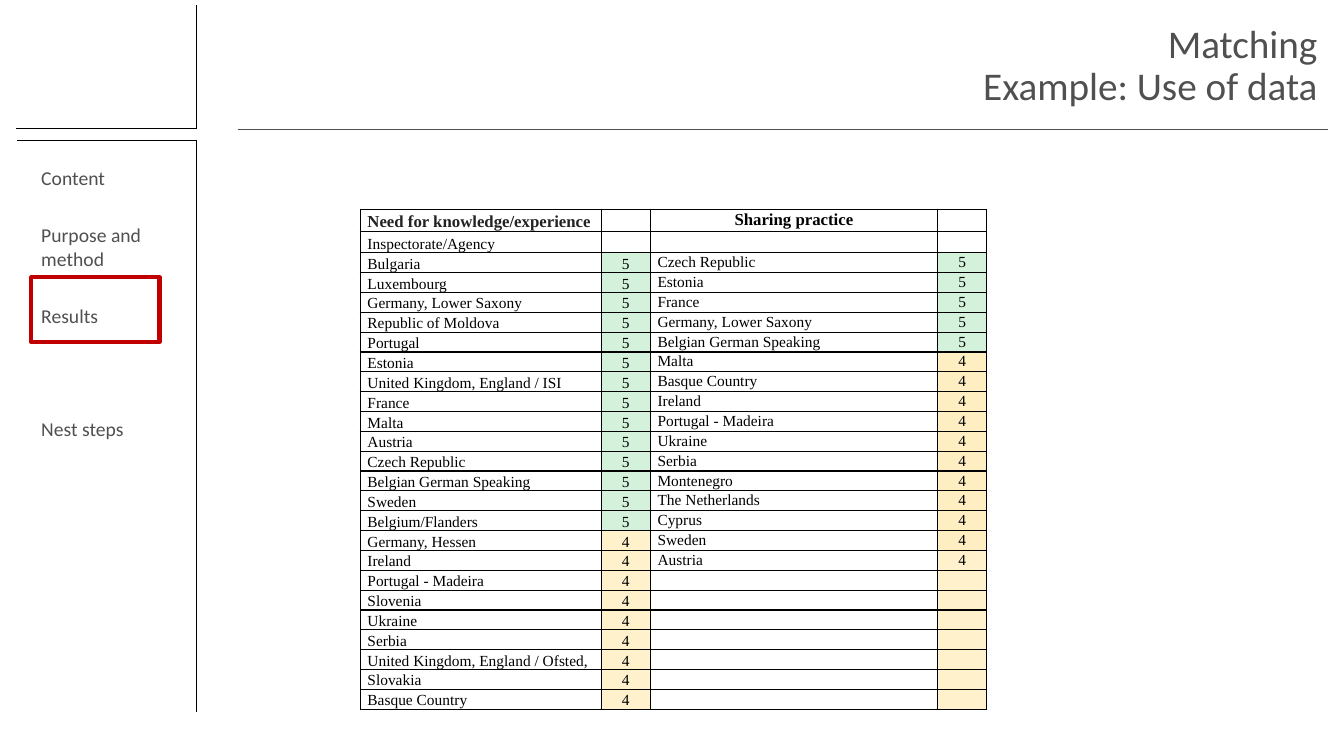
from itertools import zip_longest

from lxml.etree import SubElement, fromstring
from pptx import Presentation
from pptx.dml.color import RGBColor
from pptx.enum.shapes import MSO_CONNECTOR, MSO_SHAPE
from pptx.enum.text import MSO_ANCHOR as Anchor, PP_ALIGN as Align
from pptx.oxml.ns import nsdecls, qn
from pptx.util import Cm, Pt

COLORS = {
    "black": "000000", "text": "505050", "heading": "222222", "marker": "C00000",
    "white": "FFFFFF", "green": "D3F1DB", "amber": "FEEEC2", "pale": "FEF1CC",
}
NEEDS = [
    ("Bulgaria", 5), ("Luxembourg", 5), ("Germany, Lower Saxony", 5),
    ("Republic of Moldova", 5), ("Portugal", 5), ("Estonia", 5),
    ("United Kingdom, England / ISI", 5), ("France", 5), ("Malta", 5),
    ("Austria", 5), ("Czech Republic", 5), ("Belgian German Speaking", 5),
    ("Sweden", 5), ("Belgium/Flanders", 5), ("Germany, Hessen", 4),
    ("Ireland", 4), ("Portugal - Madeira", 4), ("Slovenia", 4), ("Ukraine", 4),
    ("Serbia", 4), ("United Kingdom, England / Ofsted,", 4), ("Slovakia", 4),
    ("Basque Country", 4),
]
PRACTICES = [
    ("Czech Republic", 5), ("Estonia", 5), ("France", 5),
    ("Germany, Lower Saxony", 5), ("Belgian German Speaking", 5), ("Malta", 4),
    ("Basque Country", 4), ("Ireland", 4), ("Portugal - Madeira", 4),
    ("Ukraine", 4), ("Serbia", 4), ("Montenegro", 4), ("The Netherlands", 4),
    ("Cyprus", 4), ("Sweden", 4), ("Austria", 4),
]
LAST_AMBER_PRACTICE = 14
MENU = [("Content", 0), ("Purpose and method", 12), ("Results", 12), ("Nest steps", 52)]
COLUMN_WIDTHS = [6.07, 1.24, 7.24, 1.24]


def color(name):
    return RGBColor.from_string(COLORS[name])


def style_runs(para, font, size, color_name, bold=False):
    for span in para.runs:
        span.font.name = font
        span.font.size = Pt(size)
        span.font.bold = bold
        span.font.color.rgb = color(color_name)


def add_line(page, x1, y1, x2, y2, color_name="black"):
    line = page.shapes.add_connector(
        MSO_CONNECTOR.STRAIGHT, Cm(x1), Cm(y1), Cm(x2), Cm(y2))
    line.line.color.rgb = color(color_name)
    line.line.width = Pt(0.5)
    SubElement(line._element.spPr, qn("a:effectLst"))


def add_logo_corner(page, left, top, width, height):
    right, bottom = left + width, top + height
    add_line(page, left, bottom, right, bottom)
    add_line(page, right, top, right, bottom)


def add_header(page, left, top, width, height):
    box = page.shapes.add_textbox(Cm(left), Cm(top), Cm(width), Cm(height))
    frame = box.text_frame
    frame.word_wrap = True
    frame.vertical_anchor = Anchor.MIDDLE
    frame.text = "Matching\vExample: Use of data"
    para = frame.paragraphs[0]
    para.alignment = Align.RIGHT
    para.line_spacing = 0.9
    style_runs(para, "Calibri", 28, "text")
    rule = top + height + 0.02
    add_line(page, left + 0.53, rule, left + width + 0.03, rule, "text")


def add_sidebar(page, left, top, width, height):
    right = left + width
    add_line(page, left, top, right, top)
    add_line(page, right, top, right, top + height)

    box = page.shapes.add_textbox(Cm(left + 0.36), Cm(top + 0.53), Cm(3.4), Cm(8.71))
    frame = box.text_frame
    frame.word_wrap = True
    frame.text = "\n".join(label for label, _ in MENU)
    for para, (_, space) in zip(frame.paragraphs, MENU):
        para.space_before = Pt(space)
        para.space_after = Pt(12)
        style_runs(para, "Calibri", 14, "text")

    marker = page.shapes.add_shape(
        MSO_SHAPE.RECTANGLE, Cm(left + 0.36), Cm(top + 3.46), Cm(3.23), Cm(1.63))
    marker.shadow.inherit = False
    marker.fill.background()
    marker.line.color.rgb = color("marker")
    marker.line.width = Pt(3)


def add_borders(cell):
    properties = cell._tc.get_or_add_tcPr()
    for position, side in enumerate(("lnL", "lnR", "lnT", "lnB")):
        properties.insert(position, fromstring(
            f'<a:{side} {nsdecls("a")} w="12700"><a:solidFill>'
            f'<a:srgbClr val="{COLORS["black"]}"/></a:solidFill></a:{side}>'))


def fill_cell(cell, text, column, fill=None, size=11, color_name="black",
              bold=False, centered=False):
    cell.margin_left = cell.margin_right = Cm(0.18)
    cell.margin_top = cell.margin_bottom = 0
    cell.vertical_anchor = Anchor.BOTTOM if column < 2 else Anchor.TOP
    cell.text_frame.text = text
    para = cell.text_frame.paragraphs[0]
    para.line_spacing = 1.07
    para.alignment = Align.CENTER if centered else Align.LEFT
    style_runs(para, "Times New Roman", size, color_name, bold)
    if not text:
        SubElement(para._p, qn("a:endParaRPr"), sz="1100")
    if fill:
        cell.fill.solid()
        cell.fill.fore_color.rgb = color(fill)
    else:
        cell.fill.background()
    add_borders(cell)


def add_matching_table(page, left, top, width, height):
    pairs = list(zip_longest(NEEDS, PRACTICES, fillvalue=("", "")))
    table = page.shapes.add_table(
        len(pairs) + 2, 4, Cm(left), Cm(top), Cm(width), Cm(height)).table
    table.first_row = table.horz_banding = False
    for column, column_width in zip(table.columns, COLUMN_WIDTHS):
        column.width = Cm(column_width)
    for index, row in enumerate(table.rows):
        row.height = Cm({0: 0.56, 1: 0.54}.get(index, 0.5))

    headings = ["Need for knowledge/experience", "", "Sharing practice", ""]
    for column, heading in enumerate(headings):
        fill_cell(table.cell(0, column), heading, column, size=12, bold=True,
                  color_name="black" if column else "heading", centered=column == 2)
        fill_cell(table.cell(1, column), "" if column else "Inspectorate/Agency", column)

    for index, ((need, need_score), (practice, practice_score)) in enumerate(pairs):
        lower = "amber" if index <= LAST_AMBER_PRACTICE else "pale"
        values = [
            (need, None),
            (need_score, "green" if need_score == 5 else "pale"),
            (practice, "white"),
            (practice_score, "green" if practice_score == 5 else lower),
        ]
        for column, (value, fill) in enumerate(values):
            fill_cell(table.cell(index + 2, column), str(value), column, fill,
                      centered=column % 2 == 1)


def main():
    deck = Presentation()
    deck.slide_width, deck.slide_height = Cm(33.87), Cm(19.05)
    page = deck.slides.add_slide(deck.slide_layouts[6])
    add_logo_corner(page, 0.41, 0.13, 4.54, 3.11)
    add_header(page, 5.46, 0.13, 27.99, 3.1)
    add_sidebar(page, 0.43, 3.53, 4.52, 14.4)
    add_matching_table(page, 9.08, 5.27, sum(COLUMN_WIDTHS), 12.6)
    deck.save("out.pptx")


if __name__ == "__main__":
    main()
